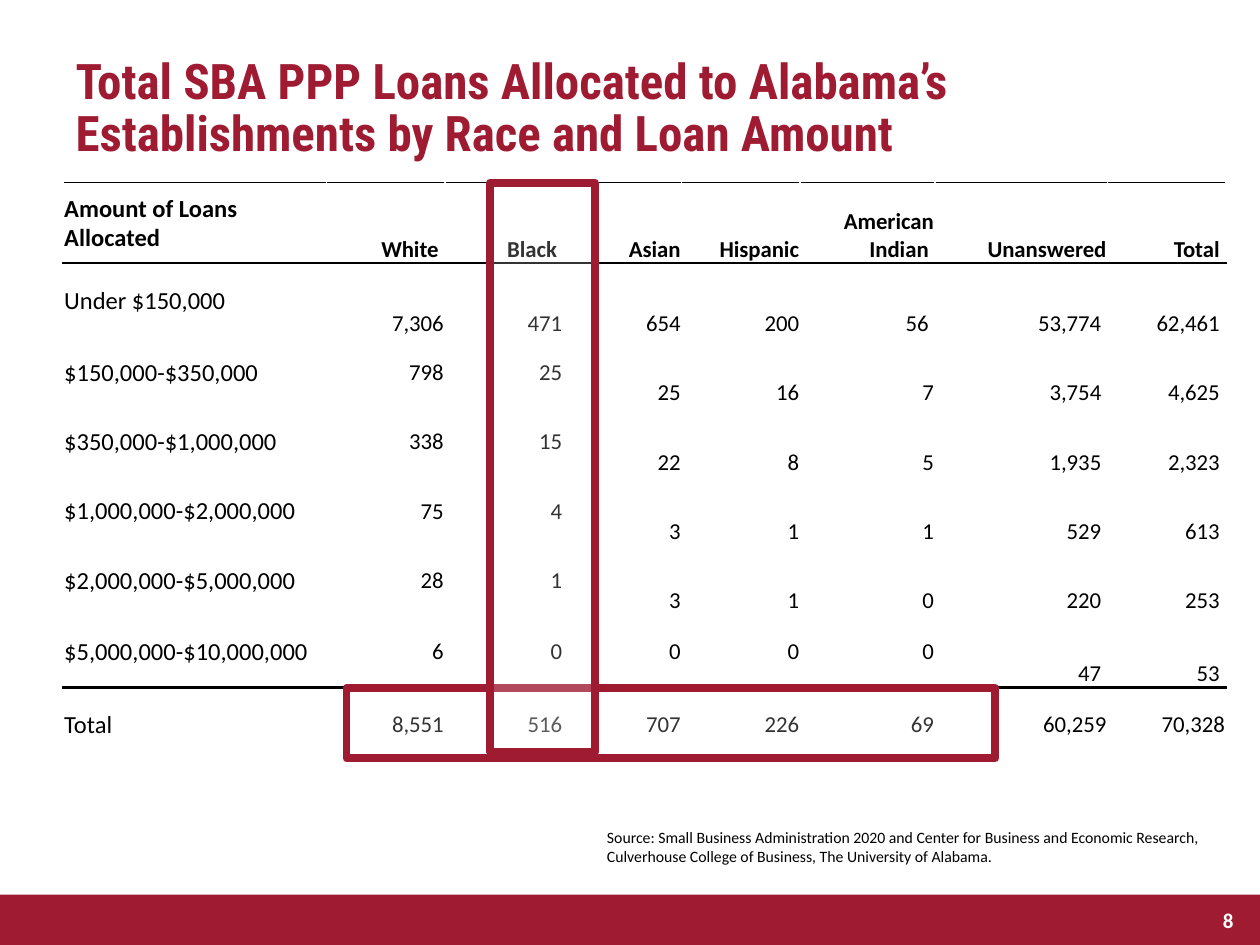
"""Build the slide on SBA PPP loans by race and loan amount."""
from pptx import Presentation
from pptx.dml.color import RGBColor as Color
from pptx.enum.shapes import MSO_SHAPE as Preset
from pptx.enum.text import MSO_ANCHOR as Anchor, PP_ALIGN as Align
from pptx.oxml import parse_xml
from pptx.oxml.ns import nsdecls, qn
from pptx.util import Pt

COLORS = {"crimson": "9E1B32", "white": "FFFFFF", "black": "000000"}
ANCHORS = {"t": Anchor.TOP, "m": Anchor.MIDDLE, "b": Anchor.BOTTOM}
COLUMN_WIDTHS = [150.5, 67.7, 67.7, 67.7, 67.7, 77, 98.6, 67.7]
ROW_HEIGHTS = [46, 42.5] + [39.6] * 4 + [41.8] * 2
LOAN_ROWS = [
    ["Amount of Loans Allocated", "White ", "Black ", "Asian", "Hispanic",
     "American Indian ", "Unanswered", "Total "],
    ["Under $150,000", "7,306", "471", "654", "200", "56 ", "53,774 ", "62,461 "],
    ["$150,000-$350,000", "798", "25", "25", "16", "7", "3,754 ", "4,625 "],
    ["$350,000-$1,000,000", "338", "15", "22", "8", "5", "1,935 ", "2,323 "],
    ["$1,000,000-$2,000,000", "75", "4", "3", "1", "1", "529 ", "613 "],
    ["$2,000,000-$5,000,000", "28", "1", "3", "1", "0", "220 ", "253 "],
    ["$5,000,000-$10,000,000", "6", "0", "0", "0", "0", "47 ", "53 "],
    ["Total", "8,551", "516", "707", "226", "69", "60,259", "70,328"],
]
ROW_ANCHORS = ["mbbbbbbb"] * 2 + ["mmmbbbbb"] * 4 + ["mmmmmmbb", "mmmmmmmm"]
ROW_BORDERS = {0: {"T": 1, "B": 1}, 1: {"T": 1}, 6: {"B": 2}, 7: {"T": 2}}
HEADER_INDENTS = {5: 14.4, 6: 0.7}


class SlideBuilder:
    """Hold the style and the current slide."""

    def __init__(self, slide, font="Calibri", title_font="Roboto Condensed"):
        self.slide = slide
        self.font = font
        self.title_font = title_font

    def color(self, name):
        """Return a named colour."""
        return Color.from_string(COLORS[name])

    def format_text(self, paragraph, size, color="black", bold=False,
                    align=Align.LEFT, name=None):
        """Apply font values and alignment to a paragraph."""
        values = {"size": Pt(size), "bold": bold, "name": name or self.font}
        for attribute, value in values.items():
            setattr(paragraph.font, attribute, value)
        paragraph.font.color.rgb = self.color(color)
        paragraph.alignment = align

    def title(self, text, box):
        """Place and format the title placeholder."""
        shape = self.slide.shapes.title
        for attribute, value in zip(("left", "top", "width", "height"), box):
            setattr(shape, attribute, Pt(value))
        shape.text_frame.text = text
        shape.text_frame.vertical_anchor = Anchor.TOP
        paragraph = shape.text_frame.paragraphs[0]
        self.format_text(paragraph, 28, "crimson", True, name=self.title_font)
        paragraph.line_spacing = 0.9

    def text(self, text, box, anchor="t", **style):
        """Add a wrapped text box with one paragraph per line."""
        frame = self.slide.shapes.add_textbox(*map(Pt, box)).text_frame
        frame.word_wrap = True
        frame.vertical_anchor = ANCHORS[anchor]
        frame.text = text
        for paragraph in frame.paragraphs:
            self.format_text(paragraph, **style)

    def rectangle(self, box, fill, line=None, line_width=0, opacity=100):
        """Add a rectangle with an optional outline and see-through fill."""
        shape = self.slide.shapes.add_shape(Preset.RECTANGLE, *map(Pt, box))
        shape.shadow.inherit = False
        shape.fill.solid()
        shape.fill.fore_color.rgb = self.color(fill)
        if opacity < 100:
            fill_color = shape.fill._xPr.find(qn("a:solidFill"))[0]
            fill_color.append(parse_xml(
                f'<a:alpha {nsdecls("a")} val="{opacity * 1000}"/>'))
        if line:
            shape.line.color.rgb = self.color(line)
            shape.line.width = Pt(line_width)
        else:
            shape.line.fill.background()

    def border(self, cell, side, width):
        """Draw one black border of a cell."""
        cell._tc.get_or_add_tcPr().append(parse_xml(
            f'<a:ln{side} {nsdecls("a")} w="{Pt(width)}"><a:solidFill>'
            f'<a:srgbClr val="{COLORS["black"]}"/></a:solidFill></a:ln{side}>'))

    def cell(self, cell, text, anchor, borders, indent=0, **style):
        """Fill and format one table cell."""
        for side, width in borders.items():
            self.border(cell, side, width)
        cell.fill.background()
        cell.text = text
        values = {"margin_left": Pt(0.7), "margin_right": Pt(0.7),
                  "margin_top": Pt(0.7), "margin_bottom": 0,
                  "vertical_anchor": ANCHORS[anchor]}
        for attribute, value in values.items():
            setattr(cell, attribute, value)
        paragraph = cell.text_frame.paragraphs[0]
        if indent:
            paragraph._p.get_or_add_pPr().set("marL", str(Pt(indent)))
        self.format_text(paragraph, **style)

    def table(self, rows, left, top):
        """Add the loan table with ruled header and total rows."""
        table = self.slide.shapes.add_table(
            len(rows), len(COLUMN_WIDTHS), Pt(left), Pt(top),
            Pt(sum(COLUMN_WIDTHS)), Pt(sum(ROW_HEIGHTS))).table
        table.first_row = table.horz_banding = False
        for column, width in zip(table.columns, COLUMN_WIDTHS):
            column.width = Pt(width)
        for row, height in zip(table.rows, ROW_HEIGHTS):
            row.height = Pt(height)
        for i, (row, anchors) in enumerate(zip(rows, ROW_ANCHORS)):
            for j, (text, anchor) in enumerate(zip(row, anchors)):
                self.cell(table.cell(i, j), text, anchor, ROW_BORDERS.get(i, {}),
                          indent=HEADER_INDENTS.get(j, 0) if i == 0 else 0,
                          size=13 if j else 14, bold=i == 0,
                          align=Align.RIGHT if j else Align.LEFT)


def main():
    """Build and save the presentation."""
    presentation = Presentation()
    presentation.slide_width, presentation.slide_height = Pt(720), Pt(540)
    slide = presentation.slides.add_slide(presentation.slide_layouts[5])
    builder = SlideBuilder(slide)
    highlight = {"fill": "white", "line": "crimson", "line_width": 4.5, "opacity": 20}

    builder.rectangle((0, 511.2, 720, 28.8), "crimson")
    builder.text("8", (681.8, 511.2, 30.2, 28.8), "m", size=12, color="white",
                 bold=True, align=Align.RIGHT)
    builder.title("Total SBA PPP Loans Allocated to Alabama’s Establishments "
                  "by Race and Loan Amount", (36, 28.8, 648, 76.3))
    builder.table(LOAN_ROWS, 36, 104.4)
    builder.rectangle((198, 393.1, 370.8, 40.3), **highlight)
    builder.text("Source: Small Business Administration 2020 and Center for "
                 "Business and Economic Research,\nCulverhouse College of Business, "
                 "The University of Alabama.", (339.8, 469.4, 360, 28.8), size=9)
    builder.rectangle((280.1, 104.4, 59.8, 325.4), **highlight)
    presentation.save("out.pptx")


if __name__ == "__main__":
    main()
